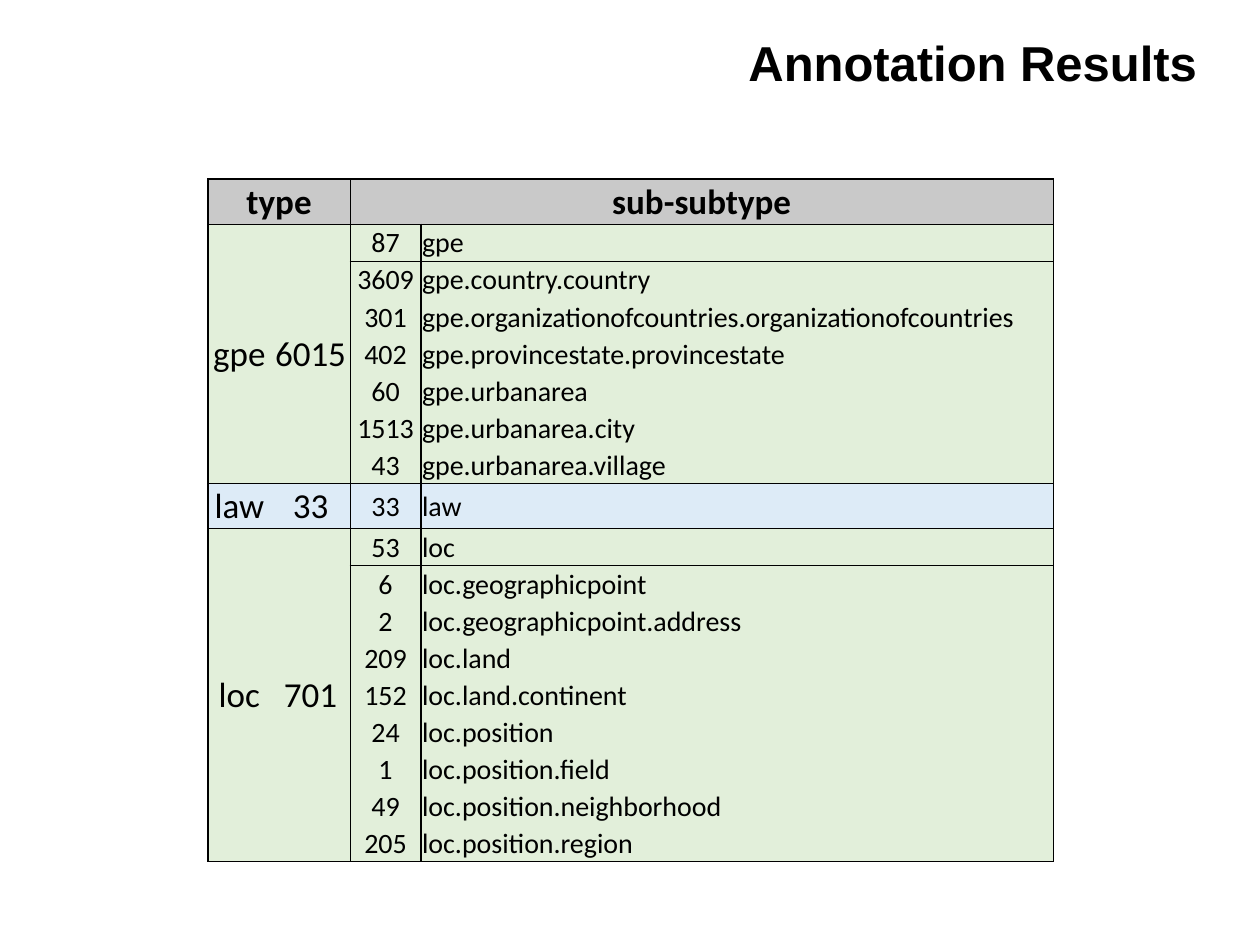
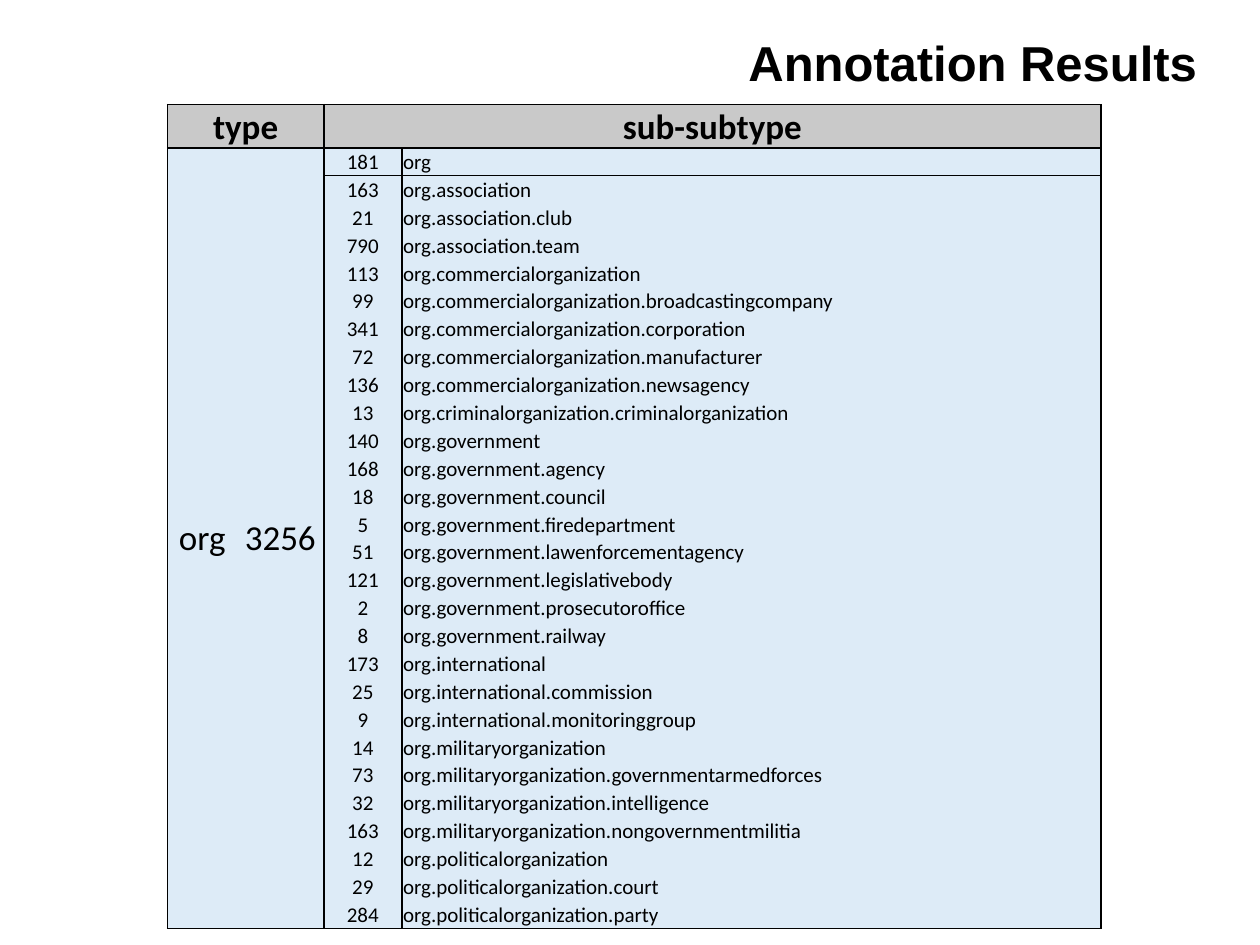
from dataclasses import dataclass

from lxml import etree
from pptx import Presentation
from pptx.dml.color import RGBColor
from pptx.enum.text import MSO_ANCHOR as Anchor, PP_ALIGN as Align
from pptx.oxml.ns import qn
from pptx.util import Inches, Pt

NO_STYLE_NO_GRID = "{2D5ABB26-0587-4C30-8999-92F81FD0307C}"


@dataclass(frozen=True)
class Theme:
    black: str = "000000"
    header: str = "C9C9C9"
    green: str = "E2EFDA"
    blue: str = "DDEBF7"
    title_font: str = "Arial"
    table_font: str = "Calibri"
    title_size: int = 28
    type_size: int = 20
    border: float = 1


@dataclass
class TypeGroup:
    name: str
    total: int
    fill: str
    subtypes: list


@dataclass
class TableLayout:
    left: float
    top: float
    height: float
    columns: tuple
    header_height: float
    subtype_size: int


class ResultsDeck:
    def __init__(self, theme):
        self.theme = theme
        self.deck = Presentation()
        self.deck.slide_width, self.deck.slide_height = Inches(10), Inches(7.5)
        self.page = None

    def add_page(self, title):
        self.page = self.deck.slides.add_slide(self.deck.slide_layouts[6])
        box = self.page.shapes.add_textbox(Inches(3.67), Inches(0.22), Inches(5.83), Inches(0.87))
        frame = box.text_frame
        frame.word_wrap = True
        frame.margin_left = frame.margin_right = frame.margin_bottom = 0
        frame.margin_top = Inches(0.04)
        frame.text = title
        self.format_text(frame, self.theme.title_font, self.theme.title_size, True, Align.RIGHT)

    def format_text(self, frame, font_name, size, bold, align):
        para = frame.paragraphs[0]
        para.alignment = align
        for span in para.runs:
            span.font.name, span.font.size, span.font.bold = font_name, Pt(size), bold
            span.font.color.rgb = RGBColor.from_string(self.theme.black)

    def add_borders(self, cell, sides):
        """Draw the sides named by the letters L, R, T and B."""
        properties = cell._tc.get_or_add_tcPr()
        for side in "LRTB":
            if side in sides:
                line = etree.SubElement(properties, qn(f"a:ln{side}"), w=str(Pt(self.theme.border)))
                fill = etree.SubElement(line, qn("a:solidFill"))
                etree.SubElement(fill, qn("a:srgbClr"), val=self.theme.black)

    def fill_cell(self, cell, text, size, fill, sides, bold=False,
                  align=Align.CENTER, anchor=Anchor.MIDDLE):
        self.add_borders(cell, sides)
        cell.fill.solid()
        cell.fill.fore_color.rgb = RGBColor.from_string(fill)
        cell.margin_left = cell.margin_right = cell.margin_top = Inches(0.01)
        cell.margin_bottom = 0
        cell.vertical_anchor = anchor
        cell.text_frame.text = str(text)
        self.format_text(cell.text_frame, self.theme.table_font, size, bold, align)

    def add_header(self, table):
        for column, label in ((0, "type"), (2, "sub-subtype")):
            cell = table.cell(0, column)
            cell.merge(table.cell(0, column + 1))
            self.fill_cell(cell, label, self.theme.type_size, self.theme.header, "LRTB",
                           bold=True, anchor=Anchor.BOTTOM)

    def add_group(self, table, first, group, subtype_size):
        last = first + len(group.subtypes) - 1
        for column, text, side in ((0, group.name, "L"), (1, group.total, "R")):
            cell = table.cell(first, column)
            if last > first:
                cell.merge(table.cell(last, column))
            self.fill_cell(cell, text, self.theme.type_size, group.fill, side + "TB")
        for row, (count, subtype) in enumerate(group.subtypes, first):
            edges = "T" * (row == first) + "B" * (row == last)
            self.fill_cell(table.cell(row, 2), count, subtype_size, group.fill, "L" + edges)
            self.fill_cell(table.cell(row, 3), subtype, subtype_size, group.fill, "R" + edges,
                           align=Align.LEFT)

    def add_results_table(self, layout, groups):
        row_count = 1 + sum(len(group.subtypes) for group in groups)
        table = self.page.shapes.add_table(
            row_count, len(layout.columns), Inches(layout.left), Inches(layout.top),
            Inches(sum(layout.columns)), Inches(layout.height)).table
        table.first_row = table.horz_banding = False
        table._tbl.tblPr.find(qn("a:tableStyleId")).text = NO_STYLE_NO_GRID
        for column, width in zip(table.columns, layout.columns):
            column.width = Inches(width)

        # A row that stands alone is as tall as the header; the others share the rest.
        tall_rows = {0}
        first = 1
        self.add_header(table)
        for group in groups:
            self.add_group(table, first, group, layout.subtype_size)
            if len(group.subtypes) == 1:
                tall_rows.add(first)
            first += len(group.subtypes)
        free_height = layout.height - len(tall_rows) * layout.header_height
        body_height = free_height / (row_count - len(tall_rows))
        for index, row in enumerate(table.rows):
            row.height = Inches(layout.header_height if index in tall_rows else body_height)


THEME = Theme()

GPE = TypeGroup("gpe", 6015, THEME.green, [
    (87, "gpe"),
    (3609, "gpe.country.country"),
    (301, "gpe.organizationofcountries.organizationofcountries"),
    (402, "gpe.provincestate.provincestate"),
    (60, "gpe.urbanarea"),
    (1513, "gpe.urbanarea.city"),
    (43, "gpe.urbanarea.village"),
])
LAW = TypeGroup("law", 33, THEME.blue, [(33, "law")])
LOC = TypeGroup("loc", 701, THEME.green, [
    (53, "loc"),
    (6, "loc.geographicpoint"),
    (2, "loc.geographicpoint.address"),
    (209, "loc.land"),
    (152, "loc.land.continent"),
    (24, "loc.position"),
    (1, "loc.position.field"),
    (49, "loc.position.neighborhood"),
    (205, "loc.position.region"),
])
ORG = TypeGroup("org", 3256, THEME.blue, [
    (181, "org"),
    (163, "org.association"),
    (21, "org.association.club"),
    (790, "org.association.team"),
    (113, "org.commercialorganization"),
    (99, "org.commercialorganization.broadcastingcompany"),
    (341, "org.commercialorganization.corporation"),
    (72, "org.commercialorganization.manufacturer"),
    (136, "org.commercialorganization.newsagency"),
    (13, "org.criminalorganization.criminalorganization"),
    (140, "org.government"),
    (168, "org.government.agency"),
    (18, "org.government.council"),
    (5, "org.government.firedepartment"),
    (51, "org.government.lawenforcementagency"),
    (121, "org.government.legislativebody"),
    (2, "org.government.prosecutoroffice"),
    (8, "org.government.railway"),
    (173, "org.international"),
    (25, "org.international.commission"),
    (9, "org.international.monitoringgroup"),
    (14, "org.militaryorganization"),
    (73, "org.militaryorganization.governmentarmedforces"),
    (32, "org.militaryorganization.intelligence"),
    (163, "org.militaryorganization.nongovernmentmilitia"),
    (12, "org.politicalorganization"),
    (29, "org.politicalorganization.court"),
    (284, "org.politicalorganization.party"),
])

PAGES = [
    (TableLayout(1.65, 1.42, 5.42, (0.5, 0.63, 0.56, 5.02), 0.36, 16), [GPE, LAW, LOC]),
    (TableLayout(1.33, 0.83, 6.54, (0.55, 0.69, 0.62, 5.55), 0.34, 12), [ORG]),
]


def main():
    results = ResultsDeck(THEME)
    for layout, groups in PAGES:
        results.add_page("Annotation Results")
        results.add_results_table(layout, groups)
    results.deck.save("out.pptx")


if __name__ == "__main__":
    main()
